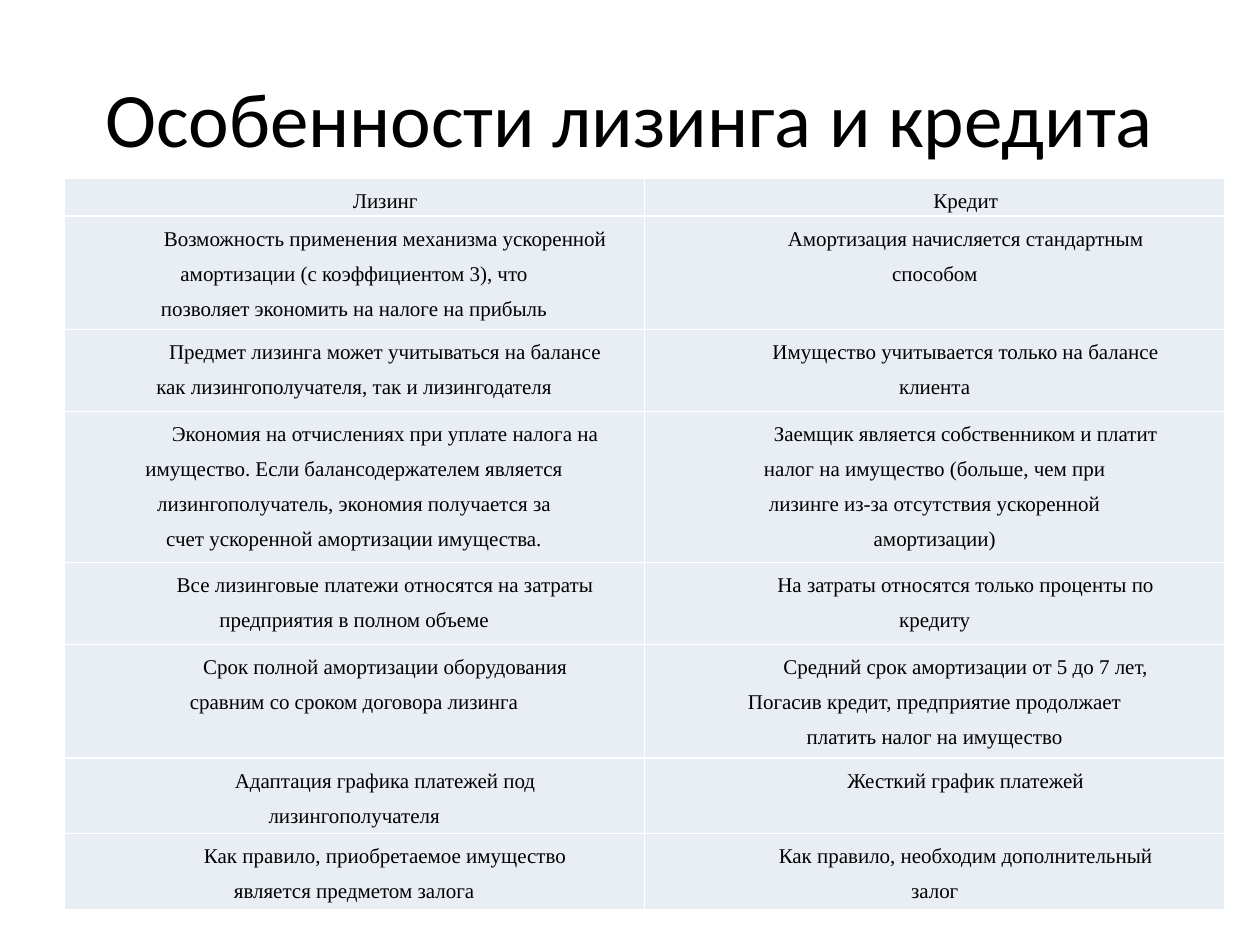
from dataclasses import dataclass

from lxml import etree
from pptx import Presentation
from pptx.dml.color import RGBColor
from pptx.enum.text import MSO_ANCHOR, PP_ALIGN
from pptx.oxml.ns import qn
from pptx.util import Emu, Pt

CENTER = PP_ALIGN.CENTER
MIDDLE = MSO_ANCHOR.MIDDLE
TOP = MSO_ANCHOR.TOP
PX_PER_INCH = 126


@dataclass(frozen=True)
class Theme:
    text: str = "000000"
    cell: str = "E9EDF4"
    border: str = "FFFFFF"
    title_font: str = "Calibri"
    table_font: str = "Times New Roman"
    title_size: int = 44
    table_size: int = 12
    border_width: int = 1


@dataclass(frozen=True)
class Box:
    left: int
    top: int
    width: int
    height: int


@dataclass(frozen=True)
class ComparisonRow:
    height: int
    leasing: str
    credit: str


THEME = Theme()
TITLE_BOX = Box(63, 38, 1134, 157)
TABLE_BOX = Box(64, 178, 1161, 730)
CELL_MARGIN = 8
FIRST_LINE_INDENT = 62
LINE_SPACING = 1.5

ROWS = [
    ComparisonRow(28, "Лизинг", "Кредит"),
    ComparisonRow(
        108,
        "Возможность применения механизма ускоренной\nамортизации (с коэффициентом 3), что\n"
        "позволяет экономить на налоге на прибыль",
        "Амортизация начисляется стандартным\nспособом",
    ),
    ComparisonRow(
        82,
        "Предмет лизинга может учитываться на балансе\nкак лизингополучателя, так и лизингодателя",
        "Имущество учитывается только на балансе\nклиента",
    ),
    ComparisonRow(
        136,
        "Экономия на отчислениях при уплате налога на\nимущество. Если балансодержателем является\n"
        "лизингополучатель, экономия получается за\nсчет ускоренной амортизации имущества.",
        "Заемщик является собственником и платит\nналог на имущество (больше, чем при\n"
        "лизинге из-за отсутствия ускоренной\nамортизации)",
    ),
    ComparisonRow(
        82,
        "Все лизинговые платежи относятся на затраты\nпредприятия в полном объеме",
        "На затраты относятся только проценты по\nкредиту",
    ),
    ComparisonRow(
        82,
        "Срок полной амортизации оборудования\nсравним со сроком договора лизинга",
        "Средний срок амортизации от 5 до 7 лет,\nПогасив кредит, предприятие продолжает\n"
        "платить налог на имущество",
    ),
    ComparisonRow(
        54,
        "Адаптация графика платежей под\nлизингополучателя",
        "Жесткий график платежей",
    ),
    ComparisonRow(
        54,
        "Как правило, приобретаемое имущество\nявляется предметом залога",
        "Как правило, необходим дополнительный\nзалог",
    ),
]


def px(length: int) -> Emu:
    return Emu(round(length * 914400 / PX_PER_INCH))


def place(box: Box) -> tuple[Emu, Emu, Emu, Emu]:
    return px(box.left), px(box.top), px(box.width), px(box.height)


def write(paragraph, text: str, font_name: str, size: int) -> None:
    paragraph.text = text
    paragraph.alignment = CENTER
    for run in paragraph.runs:
        run.font.name = font_name
        run.font.size = Pt(size)
        run.font.bold = False
        run.font.color.rgb = RGBColor.from_string(THEME.text)


def add_borders(cell) -> None:
    properties = cell._tc.get_or_add_tcPr()
    # Border lines must come before the fill
    for index, side in enumerate(("lnL", "lnR", "lnT", "lnB")):
        line = etree.Element(qn(f"a:{side}"), w=str(Pt(THEME.border_width)))
        fill = etree.SubElement(line, qn("a:solidFill"))
        etree.SubElement(fill, qn("a:srgbClr"), val=THEME.border)
        properties.insert(index, line)


def fill_cell(cell, text: str) -> None:
    cell.fill.solid()
    cell.fill.fore_color.rgb = RGBColor.from_string(THEME.cell)
    cell.margin_left = cell.margin_right = px(CELL_MARGIN)
    cell.margin_top = cell.margin_bottom = 0
    cell.vertical_anchor = TOP
    paragraph = cell.text_frame.paragraphs[0]
    write(paragraph, text, THEME.table_font, THEME.table_size)
    paragraph.line_spacing = LINE_SPACING
    paragraph_properties = paragraph._p.get_or_add_pPr()
    paragraph_properties.set("marL", "0")
    paragraph_properties.set("indent", str(px(FIRST_LINE_INDENT)))
    add_borders(cell)


def add_title(slide, text: str) -> None:
    text_frame = slide.shapes.add_textbox(*place(TITLE_BOX)).text_frame
    text_frame.word_wrap = True
    text_frame.vertical_anchor = MIDDLE
    write(text_frame.paragraphs[0], text, THEME.title_font, THEME.title_size)


def add_comparison(slide, rows: list[ComparisonRow]) -> None:
    frame = slide.shapes.add_table(len(rows), 2, *place(TABLE_BOX))
    table = frame.table
    table.first_row = False
    table.horz_banding = False
    for index, row in enumerate(rows):
        table.rows[index].height = px(row.height)
        for column, text in enumerate((row.leasing, row.credit)):
            fill_cell(table.cell(index, column), text)
    frame.height = px(TABLE_BOX.height)


def main() -> None:
    presentation = Presentation()
    presentation.slide_width = px(1260)
    presentation.slide_height = px(945)
    slide = presentation.slides.add_slide(presentation.slide_layouts[6])
    add_title(slide, "Особенности лизинга и кредита")
    add_comparison(slide, ROWS)
    presentation.save("out.pptx")


if __name__ == "__main__":
    main()
